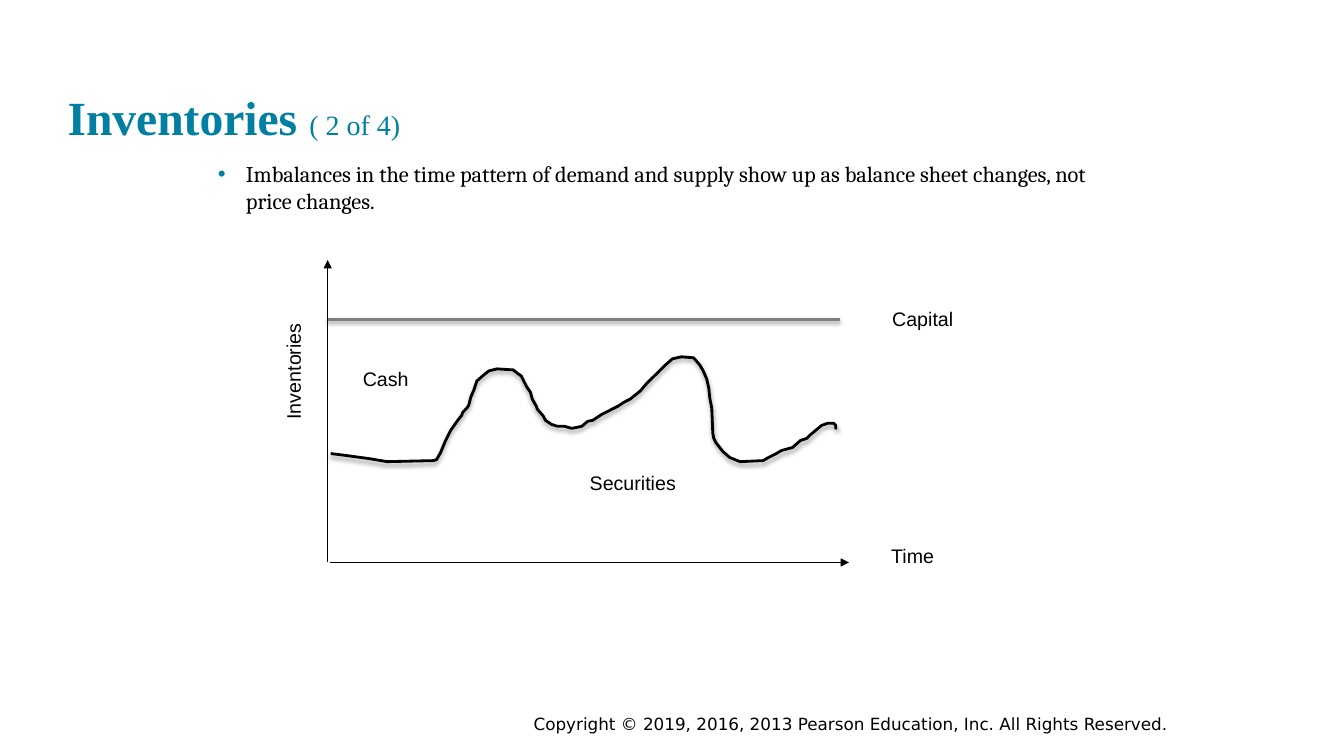
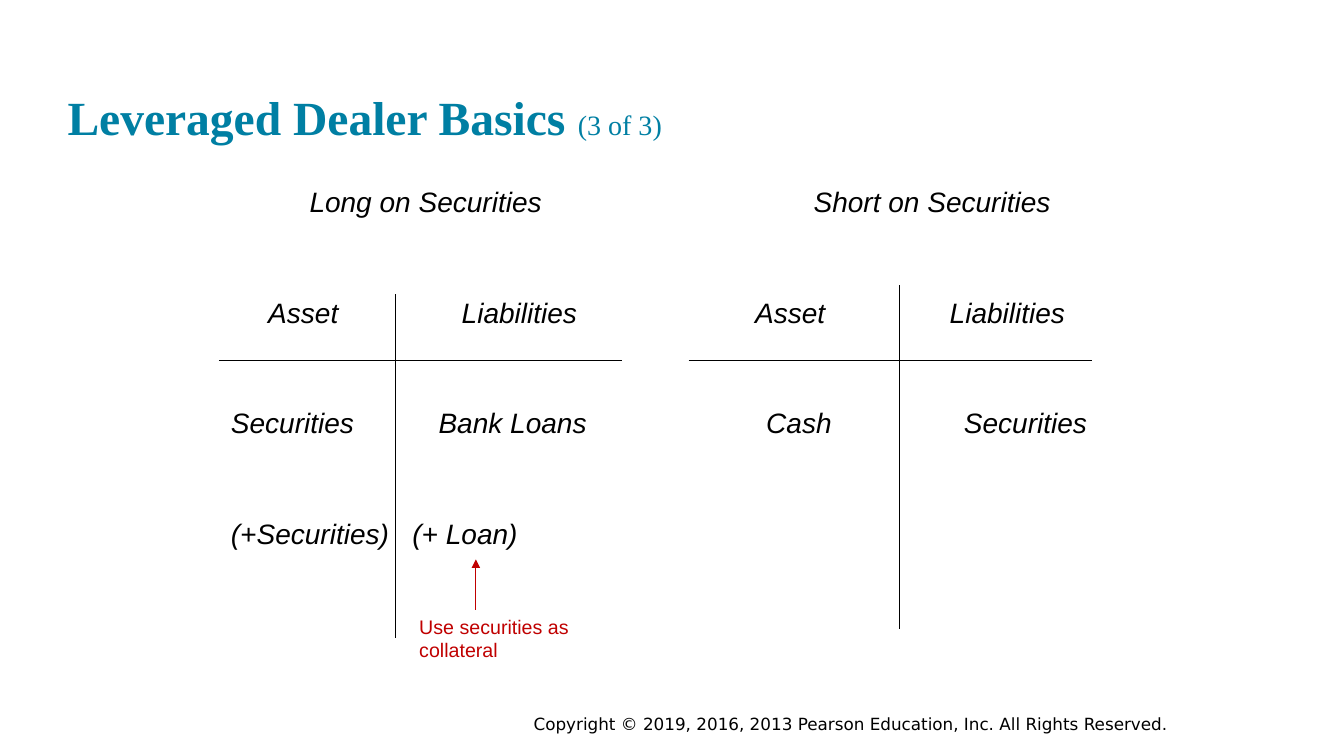
from dataclasses import dataclass

from lxml.etree import SubElement
from pptx import Presentation
from pptx.dml.color import RGBColor
from pptx.enum.shapes import MSO_CONNECTOR
from pptx.enum.text import MSO_ANCHOR, PP_ALIGN
from pptx.oxml.ns import qn
from pptx.util import Pt

PX = 9144  # EMU in one px, at 100 px to the inch


@dataclass(frozen=True)
class Theme:
    accent: str = "007FA3"
    ink: str = "000000"
    grey: str = "7F7F7F"
    alert: str = "C00000"
    title_font: str = "Times New Roman"
    body_font: str = "Cambria"
    label_font: str = "Arial"
    footer_font: str = "DejaVu Sans"
    title_size: int = 34
    large_size: int = 20
    body_size: int = 16
    label_size: int = 14
    footer_size: int = 12
    thin: float = 0.75
    thick: float = 2


THEME = Theme()
FOOTER = "Copyright © 2019, 2016, 2013 Pearson Education, Inc. All Rights Reserved."

SECURITIES_CURVE = [
    (328, 450), (344, 452), (366, 455), (384, 458), (430, 457), (433, 456),
    (437, 449), (442, 437), (447, 427), (454, 417), (458, 412), (459, 409),
    (463, 405), (465, 402), (467, 394), (470, 387), (473, 378), (481, 371),
    (485, 368), (493, 366), (509, 367), (514, 371), (517, 373), (520, 379),
    (522, 383), (526, 389), (528, 396), (532, 403), (533, 406), (539, 413),
    (541, 417), (547, 421), (553, 423), (560, 423), (567, 425), (577, 423),
    (583, 418), (588, 417), (597, 411), (605, 407), (613, 403), (619, 399),
    (625, 396), (635, 388), (641, 381), (646, 376), (652, 370), (659, 363),
    (667, 356), (676, 354), (688, 355), (694, 362), (697, 367), (701, 376),
    (703, 385), (704, 395), (706, 405), (707, 430), (708, 435), (710, 439),
    (717, 448), (724, 454), (734, 458), (757, 457), (762, 454), (770, 450),
    (775, 447), (786, 444), (794, 437), (800, 435), (803, 432), (809, 427),
    (815, 422), (821, 420), (827, 420), (829, 422), (829, 426),
]

LEDGER_ROWS = [
    [(307, "Long on Securities"), (807, "Short on Securities")],
    [(266, "Asset"), (458, "Liabilities"), (749, "Asset"), (942, "Liabilities")],
    [(229, "Securities"), (435, "Bank Loans"), (760, "Cash"), (956, "Securities")],
    [(229, "(+Securities)"), (409, "(+ Loan)")],
]


def set_effects(shape, shadow):
    """Replace the inherited effects with a soft drop shadow or with none."""
    effects = SubElement(shape.element.spPr, qn("a:effectLst"))
    if shadow:
        outer = SubElement(effects, qn("a:outerShdw"), blurRad=str(Pt(3.1)),
                           dist=str(Pt(1.6)), dir="5400000", rotWithShape="0")
        color = SubElement(outer, qn("a:srgbClr"), val=THEME.ink)
        SubElement(color, qn("a:alpha"), val="38000")


def set_line(shape, color, width):
    shape.line.color.rgb = RGBColor.from_string(color)
    shape.line.width = Pt(width)


def style_run(run, font, size, color, bold=False, italic=False):
    run.font.name, run.font.size = font, Pt(size)
    run.font.bold, run.font.italic = bold, italic
    run.font.color.rgb = RGBColor.from_string(color)


class Deck:
    def __init__(self):
        self.presentation = Presentation()
        self.presentation.slide_width = 1333 * PX
        self.presentation.slide_height = 750 * PX
        self.slide = None

    def add_slide(self, title, part):
        self.slide = self.presentation.slides.add_slide(
            self.presentation.slide_layouts[6])
        footer = self.frame(394, 703, 900, 30).paragraphs[0]
        footer.text = FOOTER
        footer.alignment = PP_ALIGN.CENTER
        style_run(footer.runs[0], THEME.footer_font, THEME.footer_size, THEME.ink)

        frame = self.frame(67, 24, 1200, 120, inset=False)
        frame.vertical_anchor = MSO_ANCHOR.BOTTOM
        for text, size, bold in ((title + " ", THEME.title_size, True),
                                 (part, THEME.large_size, False)):
            run = frame.paragraphs[0].add_run()
            run.text = text
            style_run(run, THEME.title_font, size, THEME.accent, bold)

    def frame(self, left, top, width, height, inset=True, rotation=0):
        """Add a wrapping text box and return its text frame."""
        box = self.slide.shapes.add_textbox(left * PX, top * PX, width * PX, height * PX)
        box.rotation = rotation
        frame = box.text_frame
        frame.word_wrap = True
        if not inset:
            frame.margin_left = frame.margin_top = 0
            frame.margin_right = frame.margin_bottom = 0
        return frame

    def label(self, text, left, top, width, height=34, color=THEME.ink, rotation=0):
        frame = self.frame(left, top, width, height, rotation=rotation)
        frame.text = text
        style_run(frame.paragraphs[0].runs[0], THEME.label_font, THEME.label_size, color)

    def bullet(self, text, left, top, width, height, indent=28):
        paragraph = self.frame(left, top, width, height, inset=False).paragraphs[0]
        paragraph.text = text
        properties = paragraph._p.get_or_add_pPr()
        properties.set("marL", str(indent * PX))
        properties.set("indent", str(-indent * PX))
        color = SubElement(properties, qn("a:buClr"))
        SubElement(color, qn("a:srgbClr"), val=THEME.accent)
        SubElement(properties, qn("a:buFont"), typeface=THEME.label_font)
        SubElement(properties, qn("a:buChar"), char="•")
        style_run(paragraph.runs[0], THEME.body_font, THEME.body_size, THEME.ink)

    def tabbed_rows(self, rows, left, top, width, height, gap):
        """Write each row as one paragraph, with a tab stop at each entry's x."""
        frame = self.frame(left, top, width, height, inset=False)
        for index, row in enumerate(rows):
            paragraph = frame.add_paragraph() if index else frame.paragraphs[0]
            paragraph.text = "".join("\t" + text for _, text in row)
            tabs = SubElement(paragraph._p.get_or_add_pPr(), qn("a:tabLst"))
            for x, _ in row:
                SubElement(tabs, qn("a:tab"), pos=str((x - left) * PX), algn="l")
            if index:
                paragraph.space_before = Pt(gap)
            style_run(paragraph.runs[0], THEME.label_font, THEME.large_size,
                      THEME.ink, italic=True)

    def line(self, start, end, color=THEME.ink, width=THEME.thin, arrow=False,
             shadow=False):
        connector = self.slide.shapes.add_connector(
            MSO_CONNECTOR.STRAIGHT, *(value * PX for value in (*start, *end)))
        set_line(connector, color, width)
        if arrow:
            SubElement(connector.element.spPr.find(qn("a:ln")), qn("a:tailEnd"),
                       type="triangle")
        set_effects(connector, shadow)

    def curve(self, points):
        builder = self.slide.shapes.build_freeform(*points[0], scale=PX)
        builder.add_line_segments(points[1:], close=False)
        shape = builder.convert_to_shape()
        shape.fill.background()
        set_line(shape, THEME.ink, THEME.thick)
        set_effects(shape, shadow=True)


def build_inventories(deck):
    deck.add_slide("Inventories", "( 2 of 4)")
    deck.line((325, 558), (325, 258), arrow=True)
    deck.line((327, 558), (842, 558), arrow=True)
    deck.line((325, 317), (833, 317), THEME.grey, THEME.thick, shadow=True)
    deck.curve(SECURITIES_CURVE)
    deck.bullet("Imbalances in the time pattern of demand and supply show up as "
                "balance sheet changes, not price changes.", 216, 159, 901, 102)
    deck.label("Capital", 875, 300, 92)
    deck.label("Cash", 350, 359, 92)
    deck.label("Securities", 575, 462, 108)
    deck.label("Time", 874, 535, 92)
    deck.label("Inventories", 232, 350, 118, rotation=270)


def build_leveraged_dealer(deck):
    deck.add_slide("Leveraged Dealer Basics", "(3 of 3)")
    deck.tabbed_rows(LEDGER_ROWS, 67, 183, 1200, 487, gap=55)
    for bar_left, stem_x, stem_top in ((217, 392, 292), (683, 892, 283)):
        deck.line((bar_left, 358), (bar_left + 400, 358))
        deck.line((stem_x, stem_top), (stem_x, stem_top + 341))
    deck.line((472, 605), (472, 555), THEME.alert, arrow=True)
    deck.label("Use securities as collateral", 406, 605, 200, 57, THEME.alert)


def main():
    deck = Deck()
    build_inventories(deck)
    build_leveraged_dealer(deck)
    deck.presentation.save("out.pptx")


if __name__ == "__main__":
    main()
